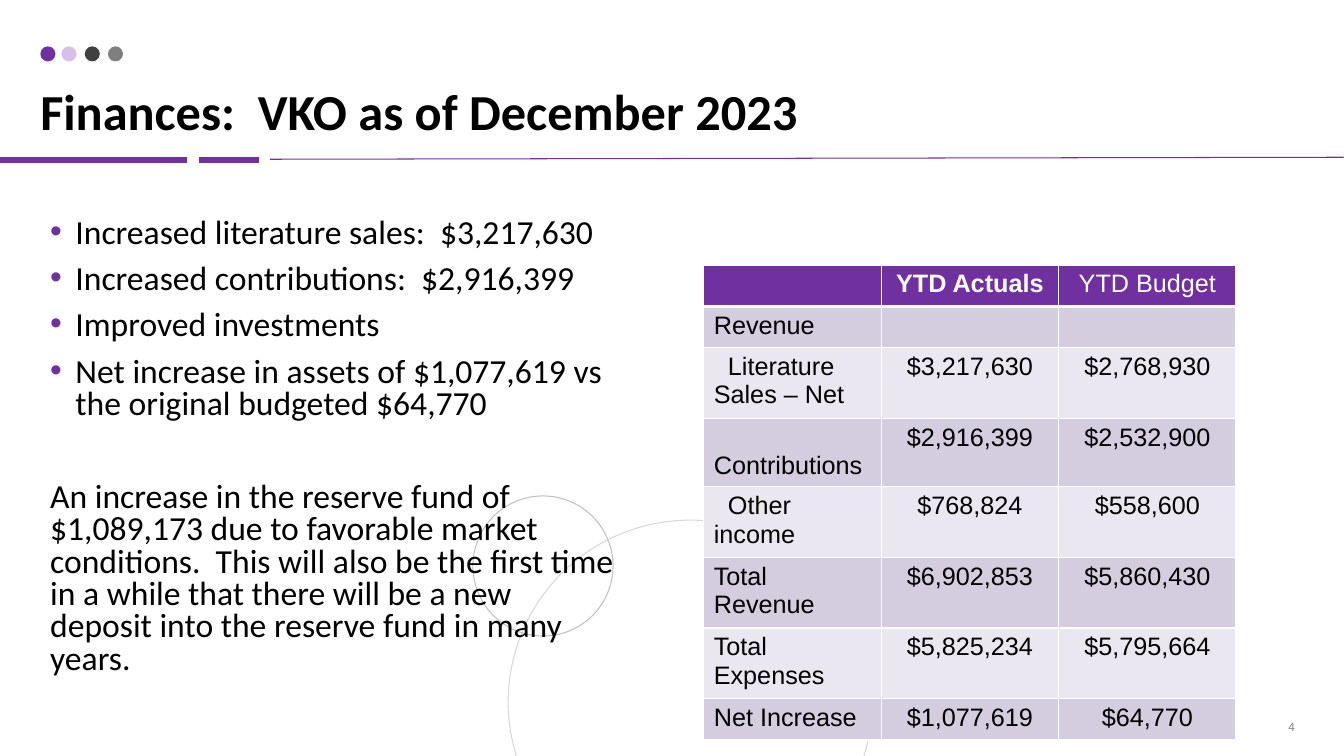
import pptx
import pptx.dml.color
import pptx.enum.shapes
import pptx.enum.text
import pptx.oxml
import pptx.oxml.ns
import pptx.util

ALIGN = pptx.enum.text.PP_ALIGN
ANCHOR = pptx.enum.text.MSO_ANCHOR
Inches = pptx.util.Inches
Pt = pptx.util.Pt

WIDTH, HEIGHT = 13.33, 7.5
MARGIN = 0.03 * WIDTH
PURPLE, BLACK, WHITE, GRAY = "7030A0", "000000", "FFFFFF", "7F7F7F"
BANDS = ["D4CCDF", "EBE7F0"]

TITLE = "Finances:  VKO as of December 2023"
HIGHLIGHTS = [
    "Increased literature sales:  $3,217,630",
    "Increased contributions:  $2,916,399",
    "Improved investments",
    "Net increase in assets of $1,077,619 vs the original budgeted $64,770",
]
RESERVE_FUND = (
    "An increase in the reserve fund of $1,089,173 due to favorable market "
    "conditions.  This will also be the first time in a while that there will "
    "be a new deposit into the reserve fund in many years."
)
PAGE_NUMBER = "4"

HEADINGS = ["", "YTD Actuals", "YTD Budget"]
FINANCES = [
    ("Revenue", "", ""),
    ("Literature Sales – Net", "$3,217,630", "$2,768,930"),
    ("Contributions", "$2,916,399", "$2,532,900"),
    ("Other income", "$768,824", "$558,600"),
    ("Total Revenue", "$6,902,853", "$5,860,430"),
    ("Total Expenses", "$5,825,234", "$5,795,664"),
    ("Net Increase", "$1,077,619", "$64,770"),
]
ONE_LINE_ROWS = {"", "Revenue", "Net Increase"}
INDENTED = {"Literature Sales – Net", "Other income"}
LOWERED = {"Contributions"}
COLUMN, ONE_LINE, TWO_LINES = 1.76, 0.41, 0.66

# start x, start y, end x, end y, weight
RULES = [
    (-0.03, 1.59, 1.85, 1.59, 4.5),
    (1.97, 1.59, 2.57, 1.59, 4.5),
    (2.68, 1.58, WIDTH, 1.56, 0.75),
]
# left, colour, opacity in percent
DOTS = [(0.4, PURPLE, 100), (0.61, "C7A2E3", 69), (0.84, "404040", 100), (1.07, GRAY, 100)]
# left, top, diameter, outline
RINGS = [(5.04, 5.16, 3.61, "D8D8D8"), (4.69, 4.92, 1.39, "BFBFBF")]


def rgb(value):
    return pptx.dml.color.RGBColor.from_string(value)


def add_xml(parent, tag, content="", **attributes):
    listed = " ".join(f'{key}="{value}"' for key, value in attributes.items())
    namespace = pptx.oxml.ns.nsdecls("a")
    parent.append(pptx.oxml.parse_xml(f"<a:{tag} {namespace} {listed}>{content}</a:{tag}>"))


def set_font(paragraph, name, size, color, bold=False):
    font = paragraph.font
    font.name, font.size, font.bold = name, Pt(size), bold
    font.color.rgb = rgb(color)


def add_rule(slide, x1, y1, x2, y2, weight):
    rule = slide.shapes.add_connector(
        pptx.enum.shapes.MSO_CONNECTOR.STRAIGHT, *map(Inches, (x1, y1, x2, y2)))
    rule.line.color.rgb = rgb(PURPLE)
    rule.line.width = Pt(weight)
    add_xml(rule._element.spPr, "effectLst")


def add_circle(slide, left, top, diameter):
    circle = slide.shapes.add_shape(
        pptx.enum.shapes.MSO_SHAPE.OVAL, *map(Inches, (left, top, diameter, diameter)))
    circle.shadow.inherit = False
    return circle


def add_decoration(slide):
    for rule in RULES:
        add_rule(slide, *rule)
    for left, color, opacity in DOTS:
        dot = add_circle(slide, left, 0.46, 0.15)
        dot.fill.solid()
        dot.fill.fore_color.rgb = rgb(color)
        dot.line.fill.background()
        if opacity < 100:
            solid = dot._element.spPr.find(pptx.oxml.ns.qn("a:solidFill"))
            add_xml(solid[0], "alpha", val=opacity * 1000)
    for left, top, diameter, outline in RINGS:
        ring = add_circle(slide, left, top, diameter)
        ring.fill.background()
        ring.line.color.rgb = rgb(outline)
        ring.line.width = Pt(0.75)


def add_text_frame(slide, left, top, width, height, anchor=ANCHOR.TOP):
    frame = slide.shapes.add_textbox(*map(Inches, (left, top, width, height))).text_frame
    frame.word_wrap = True
    frame.vertical_anchor = anchor
    return frame


def add_title(slide):
    frame = add_text_frame(slide, MARGIN, 0.4, 12.54, 1, ANCHOR.BOTTOM)
    frame.margin_left = frame.margin_right = frame.margin_top = frame.margin_bottom = 0
    title = frame.paragraphs[0]
    title.text = TITLE
    title.line_spacing = 0.9
    set_font(title, "Calibri", 36, BLACK, bold=True)


def add_body(slide):
    frame = add_text_frame(slide, MARGIN, 2.12, 5.8, 4.76)
    for index, text in enumerate(HIGHLIGHTS + [RESERVE_FUND]):
        paragraph = frame.add_paragraph() if index else frame.paragraphs[0]
        paragraph.text = text
        if text in HIGHLIGHTS:
            properties = paragraph._p.get_or_add_pPr()
            properties.set("marL", str(Inches(0.25)))
            properties.set("indent", str(Inches(-0.25)))
            add_xml(properties, "buClr", f'<a:srgbClr val="{PURPLE}"/>')
            add_xml(properties, "buFont", typeface="Arial")
            add_xml(properties, "buChar", char="•")
            paragraph.space_before = Pt(10 if index else 0)
        else:
            paragraph.space_before = Pt(43.5)
        paragraph.line_spacing = 0.8
        set_font(paragraph, "Calibri", 24, BLACK)


def add_page_number(slide):
    frame = add_text_frame(slide, 9.94, 7.07, 3, 0.27, ANCHOR.MIDDLE)
    number = frame.paragraphs[0]
    number.text = PAGE_NUMBER
    number.alignment = ALIGN.RIGHT
    set_font(number, "Calibri", 9, GRAY)


def style_cell(cell, fill, bottom_weight):
    """Give the cell white borders and a solid fill."""
    properties = cell._tc.get_or_add_tcPr()
    for side in "LRTB":
        weight = bottom_weight if side == "B" else 1
        add_xml(properties, f"ln{side}",
                f'<a:solidFill><a:srgbClr val="{WHITE}"/></a:solidFill>', w=Pt(weight))
    cell.fill.solid()
    cell.fill.fore_color.rgb = rgb(fill)


def add_finances(slide):
    rows = [HEADINGS] + FINANCES
    heights = [ONE_LINE if row[0] in ONE_LINE_ROWS else TWO_LINES for row in rows]
    table = slide.shapes.add_table(
        len(rows), len(HEADINGS), Inches(6.98), Inches(2.63),
        Inches(COLUMN * len(HEADINGS)), Inches(sum(heights))).table
    for column in table.columns:
        column.width = Inches(COLUMN)
    for r, (row, height) in enumerate(zip(rows, heights)):
        table.rows[r].height = Inches(height)
        for c, text in enumerate(row):
            cell = table.cell(r, c)
            style_cell(cell, BANDS[(r - 1) % 2] if r else PURPLE, 1 if r else 3)
            paragraph = cell.text_frame.paragraphs[0]
            paragraph.text = text
            paragraph.alignment = ALIGN.CENTER if c else ALIGN.LEFT
            set_font(paragraph, "Arial", 18, BLACK if r else WHITE, bold=text == "YTD Actuals")
            if text in INDENTED:
                paragraph._p.get_or_add_pPr().set("indent", str(Inches(0.14)))
            if text in LOWERED:
                cell.margin_top = Inches(0.33)


def main():
    deck = pptx.Presentation()
    deck.slide_width, deck.slide_height = Inches(WIDTH), Inches(HEIGHT)
    slide = deck.slides.add_slide(deck.slide_layouts[6])
    add_decoration(slide)
    add_page_number(slide)
    add_body(slide)
    add_title(slide)
    add_finances(slide)
    deck.save("out.pptx")


if __name__ == "__main__":
    main()
